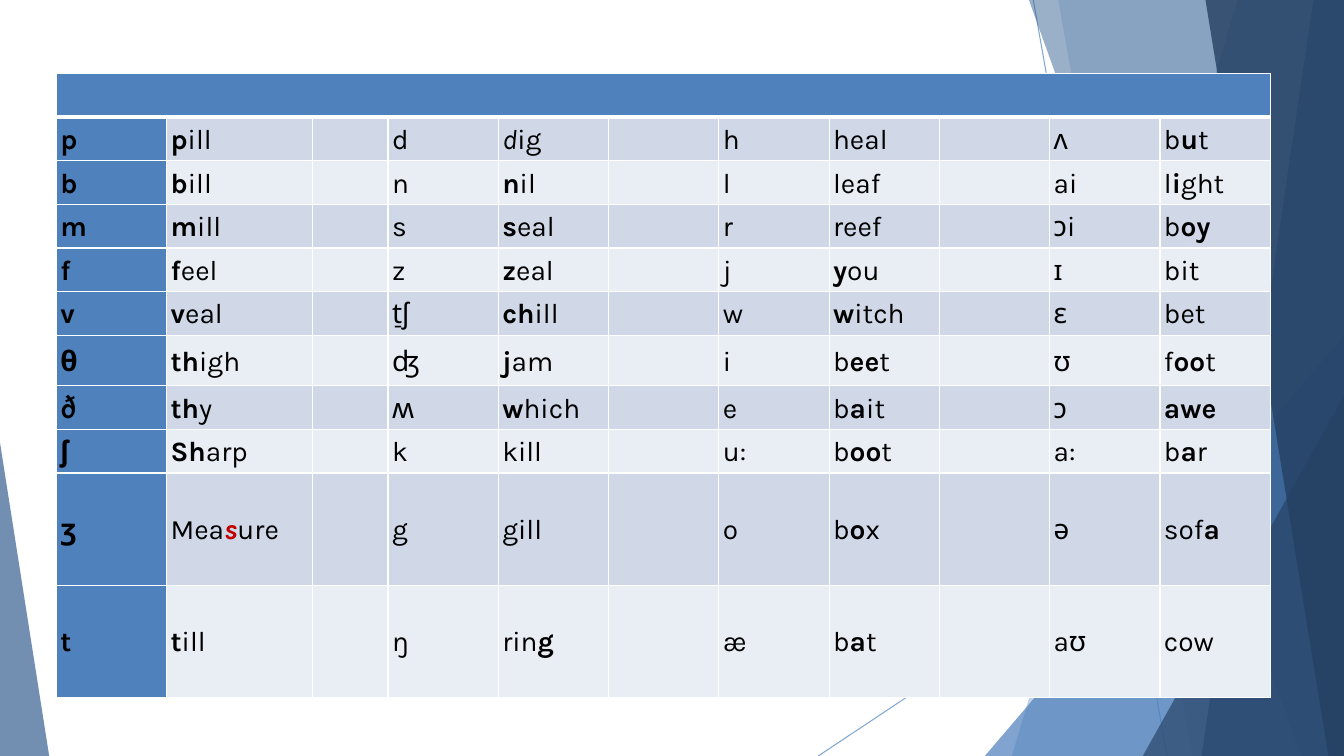
from lxml.etree import SubElement
from pptx import Presentation
from pptx.dml.color import RGBColor
from pptx.enum.shapes import MSO_CONNECTOR, MSO_SHAPE
from pptx.enum.text import MSO_ANCHOR, PP_ALIGN
from pptx.oxml import parse_xml
from pptx.oxml.ns import nsdecls, qn
from pptx.util import Cm, Pt

WIDTH, HEIGHT = 33.87, 19.05
BLUE, DEEP, NAVY = "4F81BD", "376092", "254061"
BANDS = ("D0D8E8", "E9EDF4")
WHITE, BLACK, RED = "FFFFFF", "000000", "C00000"

COLUMN_WIDTHS = [2.78, 3.68, 1.9] + [2.78] * 8
ROW_HEIGHTS = [1.1] * 6 + [1.27] + [1.1] * 2 + [2.83] * 2
SOUNDS = [
    ["*p", "*p|ill", "", "d", "/d|ig", "", "h", "heal", "", "ʌ", "b|*u|t"],
    ["*b", "*b|ill", "", "n", "*n|il", "", "l", "leaf", "", "ai", "l|*i|ght"],
    ["*m", "*m|ill", "", "s", "*s|eal", "", "r", "reef", "", "ɔi", "b|*oy"],
    ["*f", "*f|eel", "", "z", "*z|eal", "", "j", "*y|ou", "", "ɪ", "bit"],
    ["*v", "*v|eal", "", "t̠ʃ", "*ch|ill", "", "w", "*w|itch", "", "ɛ", "bet"],
    ["*θ", "*th|igh", "", "ʤ", "*j|am", "", "i", "b|*ee|t", "", "ʊ", "f|*oo|t"],
    ["*ð", "*th|y", "", "ʍ", "*w|hich", "", "e", "b|*a|it", "", "ɔ", "*awe"],
    ["*ʃ", "*Sh|arp", "", "k", "kill", "", "u:", "b|*oo|t", "", "a:", "b|*a|r"],
    ["*ʒ", "Mea|!s|ure", "", "g", "gill", "", "o", "b|*o|x", "", "ə", "sof|*a"],
    ["*t", "*t|ill", "", "ŋ", "rin|*g", "", "æ", "b|*a|t", "", "aʊ", "cow"],
]


def color(value):
    return RGBColor.from_string(value)


class SlidePainter:
    """Draws facets, lines and the sound table on one slide in a single style."""

    def __init__(self, page, font="Karla", size=20):
        self.page, self.font, self.size = page, font, size

    def fade(self, fill, opacity):
        tint = next(fill.iter(qn("a:srgbClr")))
        SubElement(tint, qn("a:alpha"), val=str(opacity * 1000))

    def paint(self, shape, value, opacity):
        shape.shadow.inherit = False
        shape.fill.solid()
        shape.fill.fore_color.rgb = color(value)
        shape.line.fill.background()
        self.fade(shape._element.spPr, opacity)

    def line(self, start, end):
        connector = self.page.shapes.add_connector(
            MSO_CONNECTOR.STRAIGHT, *map(Cm, start + end))
        connector.line.width = Pt(0.75)
        connector.line.color.rgb = color(BLUE)
        self.fade(connector._element.spPr, 70)
        SubElement(connector._element.spPr, qn("a:effectLst"))

    def facet(self, top_left, bottom_left, value, opacity):
        builder = self.page.shapes.build_freeform(Cm(top_left), 0)
        builder.add_line_segments(
            [(Cm(WIDTH), 0), (Cm(WIDTH), Cm(HEIGHT)), (Cm(bottom_left), Cm(HEIGHT))])
        self.paint(builder.convert_to_shape(), value, opacity)

    def triangle(self, left, top, width, apex, value, opacity):
        shape = self.page.shapes.add_shape(
            MSO_SHAPE.ISOSCELES_TRIANGLE,
            Cm(left), Cm(top), Cm(width), Cm(HEIGHT - top))
        shape.adjustments[0] = apex
        self.paint(shape, value, opacity)

    def fill_text(self, cell, text):
        cell.vertical_anchor = MSO_ANCHOR.MIDDLE
        cell.margin_left = cell.margin_right = Cm(0.1)
        cell.margin_top = cell.margin_bottom = Cm(0.1)
        para = cell.text_frame.paragraphs[0]
        para.alignment = PP_ALIGN.JUSTIFY
        para.line_spacing = 1.07
        para.font.name, para.font.size = self.font, Pt(self.size)
        para.font.color.rgb = color(BLACK)
        for part in filter(None, text.split("|")):
            span = para.add_run()
            span.text = part.lstrip("*/!")
            span.font.bold = part[0] in "*!"
            span.font.italic = part[0] in "/!"
            if part[0] == "!":
                span.font.color.rgb = color(RED)

    def style_cell(self, cell, value, top=1, bottom=1):
        cell.fill.solid()
        cell.fill.fore_color.rgb = color(value)
        properties = cell._tc.get_or_add_tcPr()
        sides = {"L": 1, "R": 1, "T": top, "B": bottom}
        for index, (side, width) in enumerate(sides.items()):
            properties.insert(index, parse_xml(
                f'<a:ln{side} {nsdecls("a")} w="{Pt(width)}"><a:solidFill>'
                f'<a:srgbClr val="{WHITE}"/></a:solidFill></a:ln{side}>'))

    def table(self, left, top, widths, heights, rows):
        frame = self.page.shapes.add_table(
            len(heights), len(widths), Cm(left), Cm(top),
            Cm(sum(widths)), Cm(sum(heights)))
        table = frame.table
        table.first_row = table.horz_banding = False
        for column, width in zip(table.columns, widths):
            column.width = Cm(width)
        for row, height in zip(table.rows, heights):
            row.height = Cm(height)
        for cell in table.rows[0].cells:
            self.fill_text(cell, "")
            self.style_cell(cell, BLUE, bottom=3)
        table.cell(0, 0).merge(table.cell(0, len(widths) - 1))
        for number, texts in enumerate(rows, start=1):
            for place, text in enumerate(texts):
                cell = table.cell(number, place)
                self.fill_text(cell, text)
                value = BANDS[(number - 1) % 2] if place else BLUE
                self.style_cell(cell, value, top=3 if number == 1 else 1)


def main():
    deck = Presentation()
    deck.slide_width, deck.slide_height = Cm(WIDTH), Cm(HEIGHT)
    painter = SlidePainter(deck.slides.add_slide(deck.slide_layouts[6]))
    painter.line((26.04, 0), (29.41, HEIGHT))
    painter.line((WIDTH, 10.24), (20.62, HEIGHT))
    painter.facet(31.19, 25.5, BLUE, 36)
    painter.facet(26.67, 30.05, BLUE, 20)
    painter.triangle(24.82, 8.46, 9.05, 1, BLUE, 72)
    painter.facet(25.93, 32.79, DEEP, 50)
    painter.facet(33.1, 30.28, DEEP, 70)
    painter.facet(30.38, 33.48, NAVY, 80)
    painter.triangle(28.8, 9.98, 5.07, 1, NAVY, 66)
    painter.triangle(0, 11.15, 1.24, 0, DEEP, 70)
    painter.table(1.42, 1.85, COLUMN_WIDTHS, ROW_HEIGHTS, SOUNDS)
    deck.save("out.pptx")


if __name__ == "__main__":
    main()
